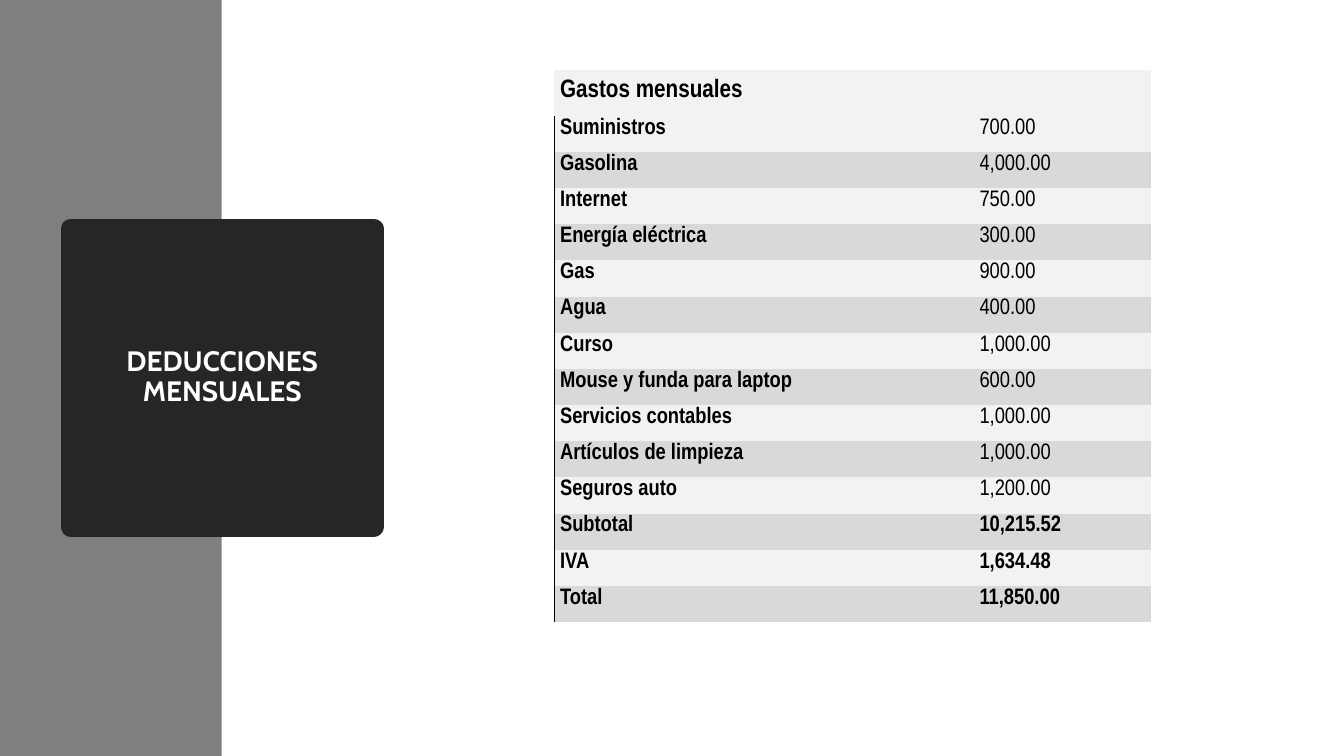
from dataclasses import dataclass

from lxml import etree
from pptx import Presentation
from pptx.dml.color import RGBColor
from pptx.enum import shapes, text
from pptx.oxml import ns
from pptx.util import Pt


@dataclass(frozen=True)
class Theme:
    band: str = "7F7F7F"
    panel: str = "262626"
    light_row: str = "F2F2F2"
    dark_row: str = "D9D9D9"
    ink: str = "000000"
    paper: str = "FFFFFF"
    title_font: str = "Cabin"
    table_font: str = "Arial Narrow"
    title_size: float = 20
    heading_size: float = 18
    row_size: float = 16


@dataclass(frozen=True)
class Expense:
    concept: str
    amount: str
    summary: bool = False


@dataclass(frozen=True)
class Block:
    left: float
    top: float
    width: float
    height: float
    color: str
    outline: float = 0


THEME = Theme()
BAND = Block(0, 0, 158.4, 540, THEME.band)
PANEL = Block(50.4, 163.3, 216.7, 213.1, THEME.panel, 13.75)
EXPENSES = [
    Expense("Suministros", "700.00"),
    Expense("Gasolina", "4,000.00"),
    Expense("Internet", "750.00"),
    Expense("Energía eléctrica", "300.00"),
    Expense("Gas", "900.00"),
    Expense("Agua", "400.00"),
    Expense("Curso", "1,000.00"),
    Expense("Mouse y funda para laptop", "600.00"),
    Expense("Servicios contables", "1,000.00"),
    Expense("Artículos de limpieza", "1,000.00"),
    Expense("Seguros auto", "1,200.00"),
    Expense("Subtotal", "10,215.52", True),
    Expense("IVA", "1,634.48", True),
    Expense("Total", "11,850.00", True),
]
COLUMN_WIDTHS = (299.6, 126.6)
HEADING_HEIGHT, ROW_HEIGHT = 29.3, 25.64


def write_text(frame, content: str, *, font: str, size: float, color: str,
               bold: bool = True, align=text.PP_ALIGN.LEFT, spacing: float = 1) -> None:
    paragraph = frame.paragraphs[0]
    paragraph.alignment = align
    paragraph.line_spacing = spacing
    run = paragraph.add_run()
    run.text = content
    run.font.name = font
    run.font.size = Pt(size)
    run.font.bold = bold
    run.font.color.rgb = RGBColor.from_string(color)


def draw_block(slide, block: Block):
    rectangle = slide.shapes.add_shape(
        shapes.MSO_SHAPE.RECTANGLE, Pt(block.left), Pt(block.top), Pt(block.width), Pt(block.height))
    rectangle.shadow.inherit = False
    rectangle.fill.solid()
    rectangle.fill.fore_color.rgb = RGBColor.from_string(block.color)
    if block.outline:
        rectangle.line.color.rgb = RGBColor.from_string(block.color)
        rectangle.line.width = Pt(block.outline)
        etree.SubElement(rectangle.line._get_or_add_ln(), ns.qn("a:round"))
    else:
        rectangle.line.fill.background()
    return rectangle


def set_borders(cell, left_line: bool) -> None:
    properties = cell._tc.get_or_add_tcPr()
    for side in ("L", "R", "T", "B"):
        border = etree.SubElement(properties, ns.qn(f"a:ln{side}"), w=str(Pt(1)))
        if side == "L" and left_line:
            fill = etree.SubElement(border, ns.qn("a:solidFill"))
            etree.SubElement(fill, ns.qn("a:srgbClr"), val=THEME.ink)
        else:
            etree.SubElement(border, ns.qn("a:noFill"))


def fill_cell(cell, content: str, *, color: str, size: float, bold: bool, left_line: bool) -> None:
    cell.margin_left, cell.margin_top = Pt(4.3), Pt(1.4)
    cell.margin_right, cell.margin_bottom = Pt(0.7), Pt(9.4)
    cell.vertical_anchor = text.MSO_ANCHOR.BOTTOM
    set_borders(cell, left_line)
    cell.fill.solid()
    cell.fill.fore_color.rgb = RGBColor.from_string(color)
    if content:
        write_text(cell.text_frame, content, font=THEME.table_font, size=size,
                   color=THEME.ink, bold=bold)


def draw_expenses(slide) -> None:
    height = HEADING_HEIGHT + ROW_HEIGHT * len(EXPENSES)
    table = slide.shapes.add_table(
        len(EXPENSES) + 1, 2, Pt(395.8), Pt(50), Pt(sum(COLUMN_WIDTHS)), Pt(height)).table
    table.first_row = table.horz_banding = False
    for column, width in zip(table.columns, COLUMN_WIDTHS):
        column.width = Pt(width)
    lines = [Expense("Gastos mensuales", ""), *EXPENSES]
    for index, expense in enumerate(lines):
        heading = index == 0
        table.rows[index].height = Pt(HEADING_HEIGHT if heading else ROW_HEIGHT)
        color = THEME.light_row if heading or index % 2 else THEME.dark_row
        size = THEME.heading_size if heading else THEME.row_size
        fill_cell(table.cell(index, 0), expense.concept, color=color, size=size,
                  bold=True, left_line=not heading)
        fill_cell(table.cell(index, 1), expense.amount, color=color, size=size,
                  bold=expense.summary, left_line=False)


def main() -> None:
    deck = Presentation()
    deck.slide_width, deck.slide_height = Pt(960), Pt(540)
    slide = deck.slides.add_slide(deck.slide_layouts[6])
    draw_block(slide, BAND)
    panel = draw_block(slide, PANEL)
    panel.text_frame.word_wrap = True
    panel.text_frame.vertical_anchor = text.MSO_ANCHOR.MIDDLE
    write_text(panel.text_frame, "DEDUCCIONES MENSUALES", font=THEME.title_font,
               size=THEME.title_size, color=THEME.paper, align=text.PP_ALIGN.CENTER, spacing=0.9)
    draw_expenses(slide)
    deck.save("out.pptx")


if __name__ == "__main__":
    main()
